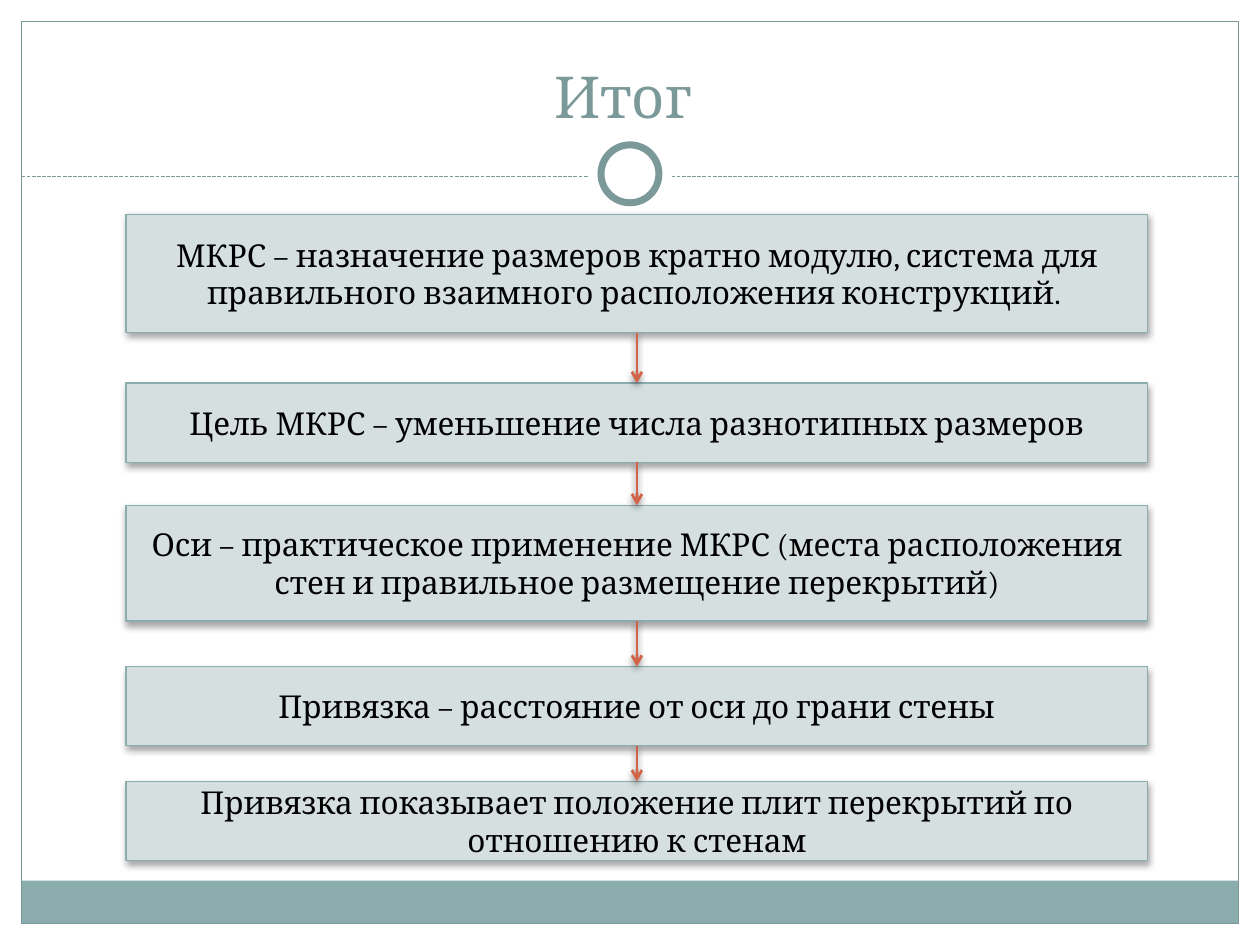
from collections import namedtuple
from dataclasses import dataclass

from lxml import etree
from pptx import Presentation
from pptx.dml.color import RGBColor
from pptx.enum.dml import MSO_LINE
from pptx.enum.shapes import MSO_CONNECTOR, MSO_SHAPE
from pptx.enum.text import MSO_ANCHOR, MSO_AUTO_SIZE, PP_ALIGN
from pptx.oxml.ns import qn
from pptx.util import Inches, Pt

RECT, OVAL = MSO_SHAPE.RECTANGLE, MSO_SHAPE.OVAL
STRAIGHT = MSO_CONNECTOR.STRAIGHT
DASH = MSO_LINE.SQUARE_DOT
MIDDLE, BOTTOM = MSO_ANCHOR.MIDDLE, MSO_ANCHOR.BOTTOM
CENTER = PP_ALIGN.CENTER
NO_FIT = MSO_AUTO_SIZE.NONE
TITLE_ONLY = 5

# The slide is a grid of square cells; a Box counts in cells.
CELL = Inches(0.1)
COLS, ROWS = 100, 75
Box = namedtuple("Box", "x y w h")


@dataclass(frozen=True)
class Theme:
    font: str = "Cambria"
    head: float = 33
    body: float = 18
    thin: float = 0.75
    ring: float = 4
    arrow: float = 1.57
    paper: str = "FFFFFF"
    ink: str = "000000"
    edge: str = "7C999A"
    band: str = "8CADAE"
    card: str = "D5DFDF"
    accent: str = "D16349"


THEME = Theme()

# Each step: text, height, gap to the next step
STEPS = [
    ("МКРС – назначение размеров кратно модулю, система для "
     "правильного взаимного расположения конструкций. ", 9.4, 4),
    ("Цель МКРС – уменьшение числа разнотипных размеров", 6.3, 3.4),
    ("Оси – практическое применение МКРС (места расположения "
     "стен и правильное размещение перекрытий)", 9.2, 3.6),
    ("Привязка – расстояние от оси до грани стены", 6.3, 2.8),
    ("Привязка показывает положение плит перекрытий по "
     "отношению к стенам", 6.3, 0),
]


def cells(*counts):
    return [round(n * CELL) for n in counts]


def write(shape, text, size, color, anchor=MIDDLE):
    frame = shape.text_frame
    frame.word_wrap = True
    frame.auto_size = NO_FIT
    frame.vertical_anchor = anchor
    para = frame.paragraphs[0]
    para.alignment = CENTER
    run = para.add_run()
    run.text = text
    run.font.name = THEME.font
    run.font.size = Pt(size)
    run.font.color.rgb = RGBColor.from_string(color)


def stroke(line, color, width):
    line.color.rgb = RGBColor.from_string(color)
    line.width = Pt(width)


def draw(slide, kind, box, fill=None, line=None, width=THEME.thin):
    shape = slide.shapes.add_shape(kind, *cells(*box))
    shape.shadow.inherit = False
    if fill:
        shape.fill.solid()
        shape.fill.fore_color.rgb = RGBColor.from_string(fill)
    else:
        shape.fill.background()
    if line:
        stroke(shape.line, line, width)
    else:
        shape.line.fill.background()
    return shape


def link(slide, start, end, color, width):
    line = slide.shapes.add_connector(STRAIGHT, *cells(*start, *end))
    stroke(line.line, color, width)
    etree.SubElement(line._element.spPr, qn("a:effectLst"))
    return line


def shade(shape, alpha):
    """Drop a soft shadow straight down, alpha in percent."""
    effects = shape._element.spPr.find(qn("a:effectLst"))
    outer = etree.SubElement(
        effects, qn("a:outerShdw"), blurRad=str(Pt(4)), dist=str(Pt(2)),
        dir=str(90 * 60000), algn="ctr", rotWithShape="0")
    tint = etree.SubElement(outer, qn("a:srgbClr"), val=THEME.ink)
    etree.SubElement(tint, qn("a:alpha"), val=str(alpha * 1000))


def add_frame(slide, box):
    foot = 3.4
    draw(slide, RECT, Box(box.x, box.y + box.h - foot, box.w, foot),
         fill=THEME.band)
    draw(slide, RECT, box, line=THEME.edge)


def add_rule(slide, box):
    """Dashed rule across the box, broken by a ring at its middle."""
    mid = box.x + box.w / 2
    level = box.y + box.h / 2
    rule = link(slide, (box.x, level + 0.2), (box.x + box.w, level + 0.2),
                THEME.edge, THEME.thin)
    rule.line.dash_style = DASH
    for size, line in ((box.h, None), (4.6, THEME.edge)):
        spot = Box(mid - size / 2, level - size / 2, size, size)
        draw(slide, OVAL, spot, THEME.paper, line, THEME.ring)


def add_title(slide, box, text):
    title = slide.shapes.title
    title.left, title.top, title.width, title.height = cells(*box)
    write(title, text, THEME.head, THEME.edge, BOTTOM)


def add_chain(slide, box, steps):
    """Stack the steps down the box and join each to the next."""
    top, mid, last = box.y, box.x + box.w / 2, None
    for text, height, gap in steps:
        card = draw(slide, RECT, Box(box.x, top, box.w, height),
                    THEME.card, THEME.band)
        shade(card, 35)
        write(card, text, THEME.body, THEME.ink)
        if last:
            arrow = link(slide, (mid, top), (mid, top),
                         THEME.accent, THEME.arrow)
            arrow.begin_connect(last, 2)
            arrow.end_connect(card, 0)
            shade(arrow, 45)
            etree.SubElement(arrow.line._get_or_add_ln(), qn("a:tailEnd"),
                             type="arrow")
        last = card
        top += height + gap


def main():
    deck = Presentation()
    deck.slide_width, deck.slide_height = cells(COLS, ROWS)
    slide = deck.slides.add_slide(deck.slide_layouts[TITLE_ONLY])
    edge = 1.7
    inner = COLS - 2 * edge
    add_frame(slide, Box(edge, edge, inner, ROWS - 2 * edge))
    add_rule(slide, Box(edge, 10.45, inner, 6.7))
    add_title(slide, Box(3.3, 2.5, 93.3, 8.3), "Итог ")
    add_chain(slide, Box(10, 17, 81.1, 51.3), STEPS)
    deck.save("out.pptx")


if __name__ == "__main__":
    main()
